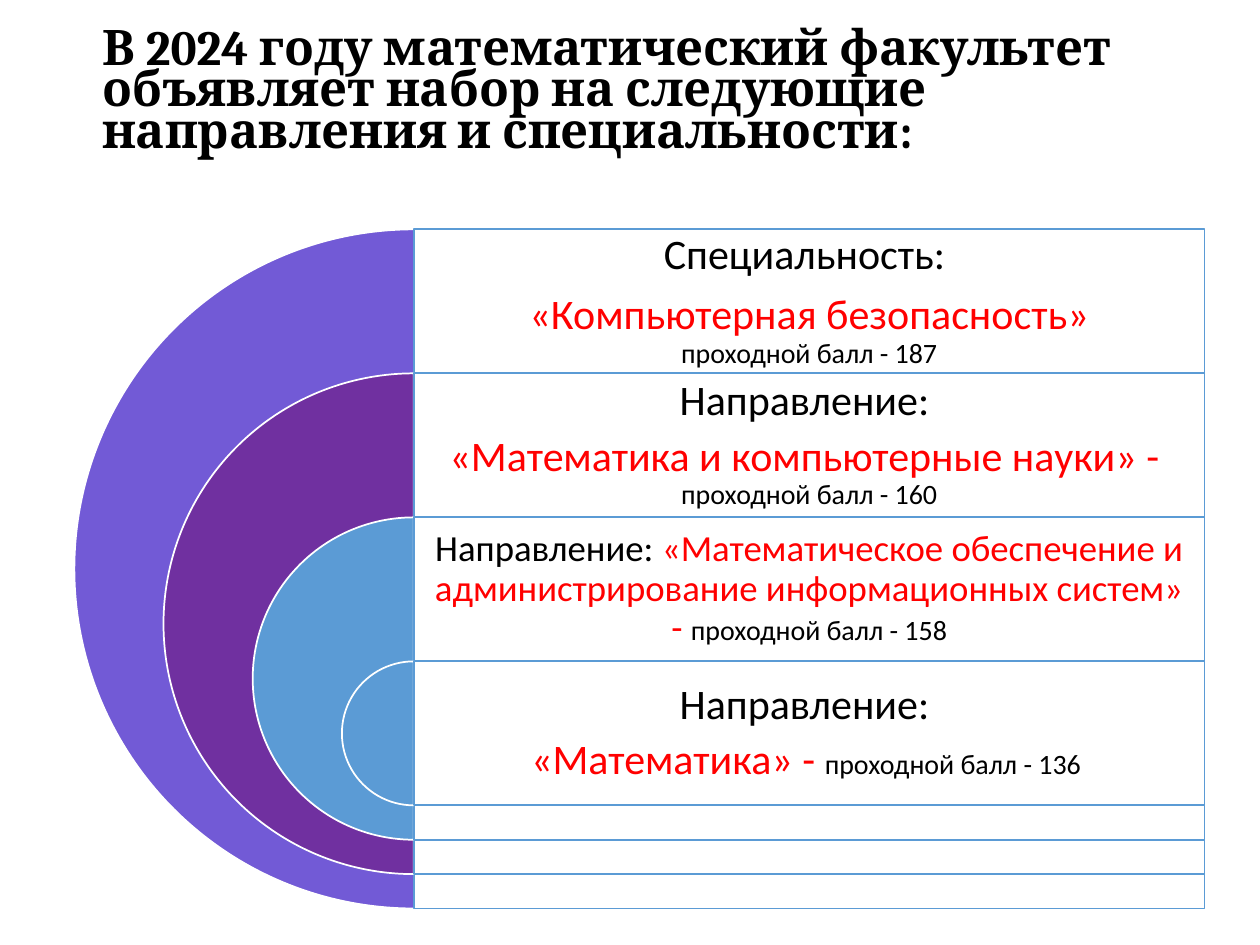
from lxml import etree
from pptx import Presentation
from pptx.dml.color import RGBColor
from pptx.enum.shapes import MSO_SHAPE
from pptx.enum.text import MSO_ANCHOR, MSO_AUTO_SIZE, PP_ALIGN
from pptx.oxml.ns import qn
from pptx.util import Inches, Pt

PIE, RECT = MSO_SHAPE.CHORD and MSO_SHAPE.PIE, MSO_SHAPE.RECTANGLE
TOP, MIDDLE = MSO_ANCHOR.TOP, MSO_ANCHOR.MIDDLE
LEFT, CENTER = PP_ALIGN.LEFT, PP_ALIGN.CENTER
NO_AUTOFIT = MSO_AUTO_SIZE.NONE

BLACK, RED, WHITE, BLUE = "000000", "FF0000", "FFFFFF", "5B9BD5"
BREAK = None
TITLE = ("В 2024 году математический факультет объявляет набор "
         "на следующие направления и специальности:")


def two_part(kind, name, score, heading_gap, split=True):
    """Paragraphs of a programme: a heading, then its name and pass score."""
    score_run = (score, 16, BLACK)
    name_runs = [(name, 24, RED)] + ([BREAK] if split else []) + [score_run]
    return [([(kind, 24, BLACK)], heading_gap), (name_runs, 8.4)]


# Half-disc colour, text inset in inches, paragraphs as (runs, space after)
PROGRAMMES = [
    ("725AD6", 0.1, two_part("Специальность: ", "«Компьютерная безопасность»",
                             "проходной балл - 187", 8.4)),
    ("7030A0", 0.1, two_part("Направление: ", "«Математика и компьютерные науки» - ",
                             "проходной балл - 160", 6)),
    (BLUE, 0.09, [([("Направление: ", 21, BLACK),
                    ("«Математическое обеспечение и администрирование "
                     "информационных систем» - ", 21, RED),
                    ("проходной балл - 158", 16, BLACK)], 7.35)]),
    (BLUE, 0.1, two_part("Направление: ", "«Математика» - ",
                         "проходной балл - 136 ", 6, split=False)),
]


def color(hex_value):
    return RGBColor.from_string(hex_value)


def style_font(font, size, hex_value, name="Calibri", bold=False):
    font.name, font.size, font.bold = name, Pt(size), bold
    font.color.rgb = color(hex_value)


def add_block(slide, kind, box, fill, line):
    block = slide.shapes.add_shape(kind, *map(Inches, box))
    block.shadow.inherit = False
    block.fill.solid()
    block.fill.fore_color.rgb = color(fill)
    block.line.color.rgb = color(line)
    block.line.width = Pt(1)
    return block


def set_opacity(block, percent):
    srgb = block.fill._xPr.find(qn("a:solidFill")).find(qn("a:srgbClr"))
    etree.SubElement(srgb, qn("a:alpha")).set("val", str(percent * 1000))


def place_title(slide, box):
    title = slide.shapes.title
    title.left, title.top, title.width, title.height = map(Inches, box)
    frame = title.text_frame
    frame.text = TITLE
    frame.word_wrap = True
    frame.auto_size = NO_AUTOFIT
    frame.vertical_anchor = TOP
    heading = frame.paragraphs[0]
    heading.alignment = LEFT
    heading.line_spacing = 0.7
    style_font(heading.runs[0].font, 28, BLACK, "Cambria", True)


def add_programme_text(slide, box, inset, paragraphs):
    frame = slide.shapes.add_textbox(*map(Inches, box)).text_frame
    frame.word_wrap = True
    frame.vertical_anchor = MIDDLE
    frame.margin_left = frame.margin_right = Inches(inset)
    frame.margin_top = frame.margin_bottom = Inches(inset)
    for index, (runs, gap) in enumerate(paragraphs):
        paragraph = frame.add_paragraph() if index else frame.paragraphs[0]
        paragraph.alignment = CENTER
        paragraph.line_spacing = 0.9
        paragraph.space_after = Pt(gap)
        for part in runs:
            if part is BREAK:
                paragraph.add_line_break()
                continue
            words, size, hex_value = part
            run = paragraph.add_run()
            run.text = words
            style_font(run.font, size, hex_value)


def add_nested_targets(slide, box):
    """Half-discs shrinking towards the last row, each with its panel."""
    left, top, width, diameter = box
    row_height = 1.143
    center = left + diameter / 2
    panel_width = left + width - center
    shrink = (diameter - row_height) / (len(PROGRAMMES) - 1)
    for index, (fill, inset, paragraphs) in enumerate(PROGRAMMES):
        size = diameter - index * shrink
        row_top = top + index * row_height
        half_disc = add_block(slide, PIE, (center - size / 2, row_top, size, size),
                              fill, WHITE)
        half_disc.adjustments[0], half_disc.adjustments[1] = 54, 162
        panel = add_block(slide, RECT, (center, row_top, panel_width, size), WHITE, BLUE)
        set_opacity(panel, 90)
        add_programme_text(slide, (center, row_top, panel_width, row_height),
                           inset, paragraphs)


def main():
    deck = Presentation()
    deck.slide_width, deck.slide_height = Inches(10), Inches(7.5)
    slide = deck.slides.add_slide(deck.slide_layouts[5])
    place_title(slide, (0.71, 0.21, 8.61, 1.34))
    add_nested_targets(slide, (0.59, 1.82, 8.97, 5.39))
    deck.save("out.pptx")


if __name__ == "__main__":
    main()
